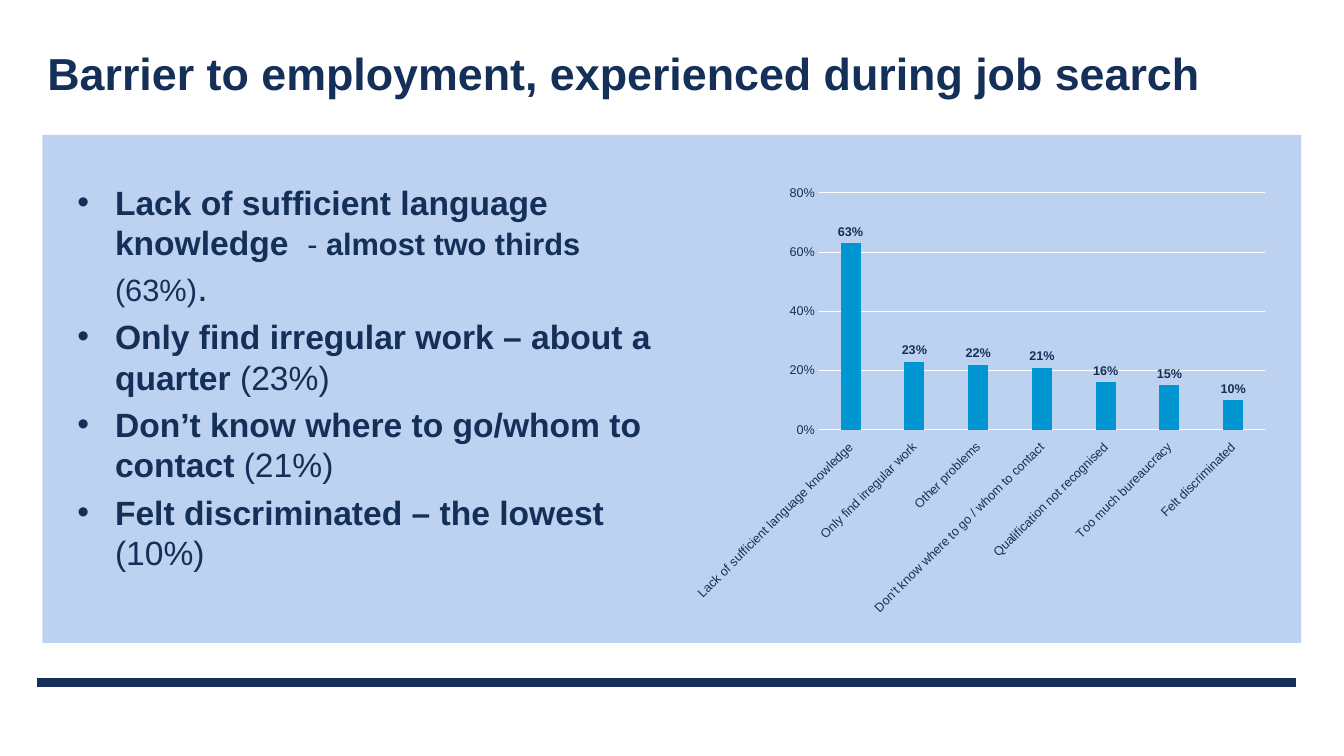
"""Build a slide on barriers met during job search, with bullets and a column chart."""
from lxml import etree
from pptx import Presentation
from pptx.chart.data import CategoryChartData
from pptx.dml.color import RGBColor
from pptx.enum.chart import XL_CHART_TYPE, XL_LABEL_POSITION, XL_TICK_LABEL_POSITION, XL_TICK_MARK
from pptx.enum.shapes import MSO_CONNECTOR, MSO_SHAPE
from pptx.enum.text import MSO_ANCHOR, MSO_AUTO_SIZE, PP_ALIGN
from pptx.oxml.ns import qn
from pptx.util import Cm, Pt

COLUMNS = XL_CHART_TYPE.COLUMN_CLUSTERED
OUTSIDE = XL_LABEL_POSITION.OUTSIDE_END
LOW = XL_TICK_LABEL_POSITION.LOW
NO_TICK = XL_TICK_MARK.NONE
STRAIGHT = MSO_CONNECTOR.STRAIGHT
RECT = MSO_SHAPE.RECTANGLE
TOP, MIDDLE = MSO_ANCHOR.TOP, MSO_ANCHOR.MIDDLE
FIXED = MSO_AUTO_SIZE.NONE
LEFT = PP_ALIGN.LEFT

FONT = "Arial"
COLORS = {"navy": "143058", "panel": "BDD2F0", "bar": "0096D1", "white": "FFFFFF"}

TITLE = "Barrier to employment, experienced during job search"
BULLETS = [
    [("Lack of sufficient language knowledge  ", 24, True), ("- ", 22, False),
     ("almost two thirds ", 22, True), ("(63%)", 22, False), (".", 28, False)],
    [("Only find irregular work – about a quarter ", 24, True), ("(23%)", 24, False)],
    [("Don’t know where to go/whom to contact ", 24, True), ("(21%)", 24, False)],
    [("Felt discriminated – the lowest ", 24, True), ("(10%)", 24, False)],
]
BARRIERS = {
    "Lack of sufficient language knowledge": 0.63,
    "Only find irregular work": 0.23,
    "Other problems": 0.22,
    "Don't know where to go / whom to contact": 0.21,
    "Qualification not recognised": 0.16,
    "Too much bureaucracy": 0.15,
    "Felt discriminated": 0.1,
}

SLIDE_W, SLIDE_H = 33.87, 19.05
MARGIN, CONTENT_W = 0.94, 31.72
RULE_Y = 17.2
BODY_TOP, BODY_W, BODY_H = 4.45, 14.96, 11.28
TEXT_X, CHART_X = 1.7, 17.22
INDENT = 0.95


def rgb(name):
    return RGBColor.from_string(COLORS[name])


def set_font(font, size, bold=False, color="navy"):
    font.name, font.size, font.bold = FONT, Pt(size), bold
    font.color.rgb = rgb(color)


def add_text(p, text, size=24, bold=False, color="navy"):
    r = p.add_run()
    r.text = text
    set_font(r.font, size, bold, color)


def add_bullet(p):
    pPr = p._p.get_or_add_pPr()
    pPr.set("marL", str(Cm(INDENT)))
    pPr.set("indent", str(-Cm(INDENT)))
    etree.SubElement(pPr, qn("a:buFont")).set("typeface", FONT)
    etree.SubElement(pPr, qn("a:buChar")).set("char", "•")


def add_title(s):
    sp = s.shapes.title
    sp.left, sp.top, sp.width, sp.height = Cm(MARGIN), Cm(0.76), Cm(CONTENT_W), Cm(2.16)
    tf = sp.text_frame
    tf.auto_size, tf.word_wrap, tf.vertical_anchor = FIXED, True, MIDDLE
    tf.paragraphs[0].alignment = LEFT
    add_text(tf.paragraphs[0], TITLE, size=32, bold=True)


def add_background(s):
    rule = s.shapes.add_connector(
        STRAIGHT, Cm(MARGIN), Cm(RULE_Y), Cm(MARGIN + CONTENT_W), Cm(RULE_Y))
    rule.line.color.rgb, rule.line.width = rgb("navy"), Pt(6)
    etree.SubElement(rule._element.spPr, qn("a:effectLst"))
    panel = s.shapes.add_shape(RECT, Cm(1.07), Cm(3.4), Cm(CONTENT_W), Cm(12.8))
    panel.shadow.inherit = False
    panel.fill.solid()
    panel.fill.fore_color.rgb = rgb("panel")
    panel.line.fill.background()


def add_bullets(s):
    sp = s.shapes.add_textbox(Cm(TEXT_X), Cm(BODY_TOP), Cm(BODY_W), Cm(BODY_H))
    tf = sp.text_frame
    tf.word_wrap, tf.vertical_anchor = True, TOP
    for i, runs in enumerate(BULLETS):
        p = tf.add_paragraph() if i else tf.paragraphs[0]
        p.space_before = Pt(5 if i else 0)
        add_bullet(p)
        for text, size, bold in runs:
            add_text(p, text, size=size, bold=bold)


def add_barrier_chart(s):
    data = CategoryChartData(number_format="0%")
    data.categories = list(BARRIERS)
    data.add_series("Series 1", list(BARRIERS.values()))
    chart = s.shapes.add_chart(
        COLUMNS, Cm(CHART_X), Cm(BODY_TOP), Cm(BODY_W), Cm(BODY_H), data).chart
    chart.has_legend = chart.has_title = False
    set_font(chart.font, 10, color="white")

    plot = chart.plots[0]
    plot.gap_width, plot.overlap, plot.vary_by_categories = 219, -27, False
    bars = plot.series[0]
    bars.format.fill.solid()
    bars.format.fill.fore_color.rgb = rgb("bar")
    labels = bars.data_labels
    labels.show_value, labels.position = True, OUTSIDE
    labels.number_format, labels.number_format_is_linked = "0%", False
    set_font(labels.font, 9, bold=True)

    cats, vals = chart.category_axis, chart.value_axis
    for axis in (cats, vals):
        axis.major_tick_mark = axis.minor_tick_mark = NO_TICK
        set_font(axis.tick_labels.font, 9)
    cats.tick_label_position = LOW
    cats._element.find(qn("c:txPr")).find(qn("a:bodyPr")).set("rot", "-2700000")
    vals.minimum_scale, vals.maximum_scale, vals.major_unit = 0, 0.8, 0.2
    vals.tick_labels.number_format = "0%"
    vals.tick_labels.number_format_is_linked = False
    vals.format.line.fill.background()
    for line in (cats.format.line, vals.major_gridlines.format.line):
        line.color.rgb, line.width = rgb("white"), Pt(0.75)


def main():
    prs = Presentation()
    prs.slide_width, prs.slide_height = Cm(SLIDE_W), Cm(SLIDE_H)
    s = prs.slides.add_slide(prs.slide_layouts[5])
    add_background(s)
    add_title(s)
    add_barrier_chart(s)
    add_bullets(s)
    prs.save("out.pptx")


if __name__ == "__main__":
    main()
